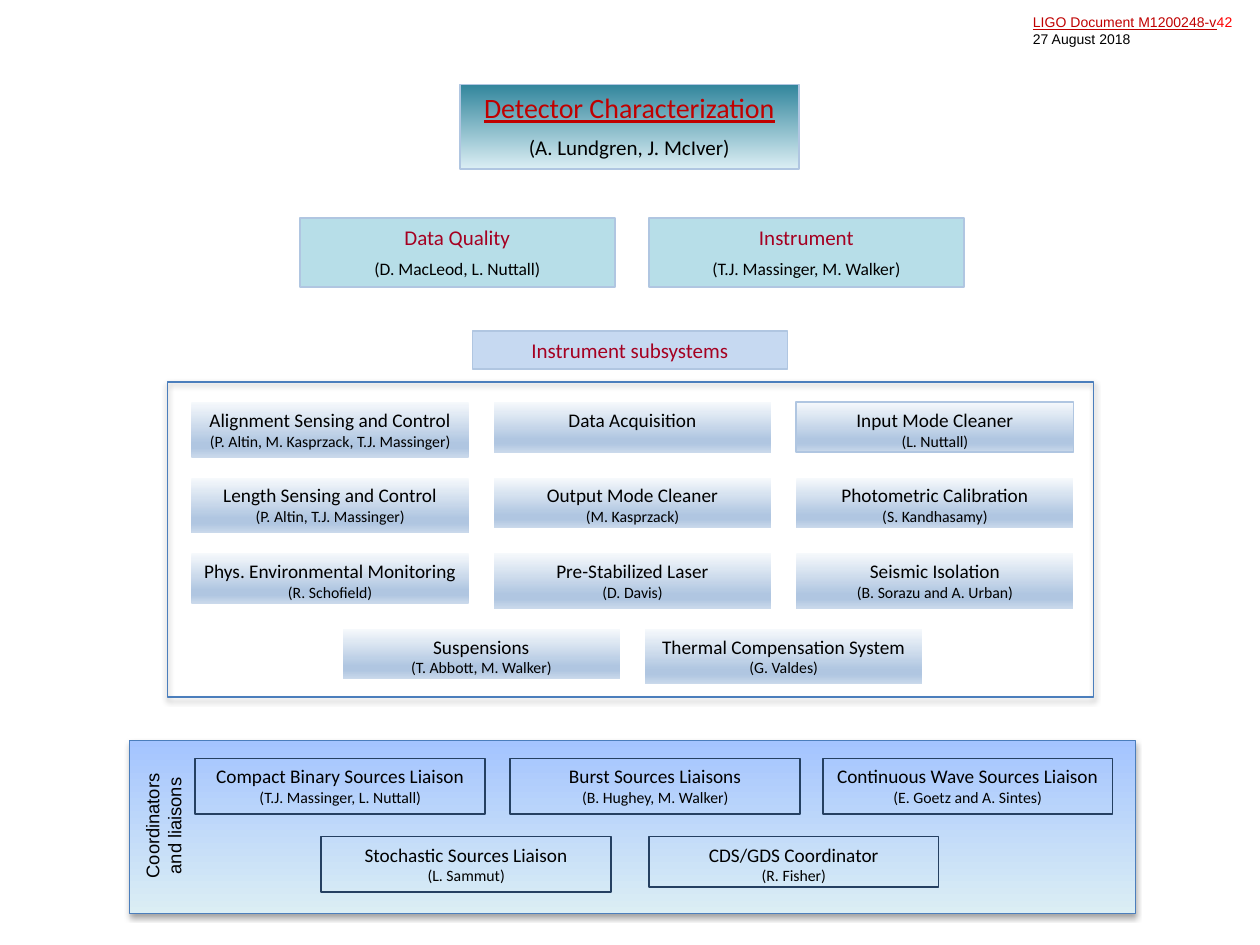
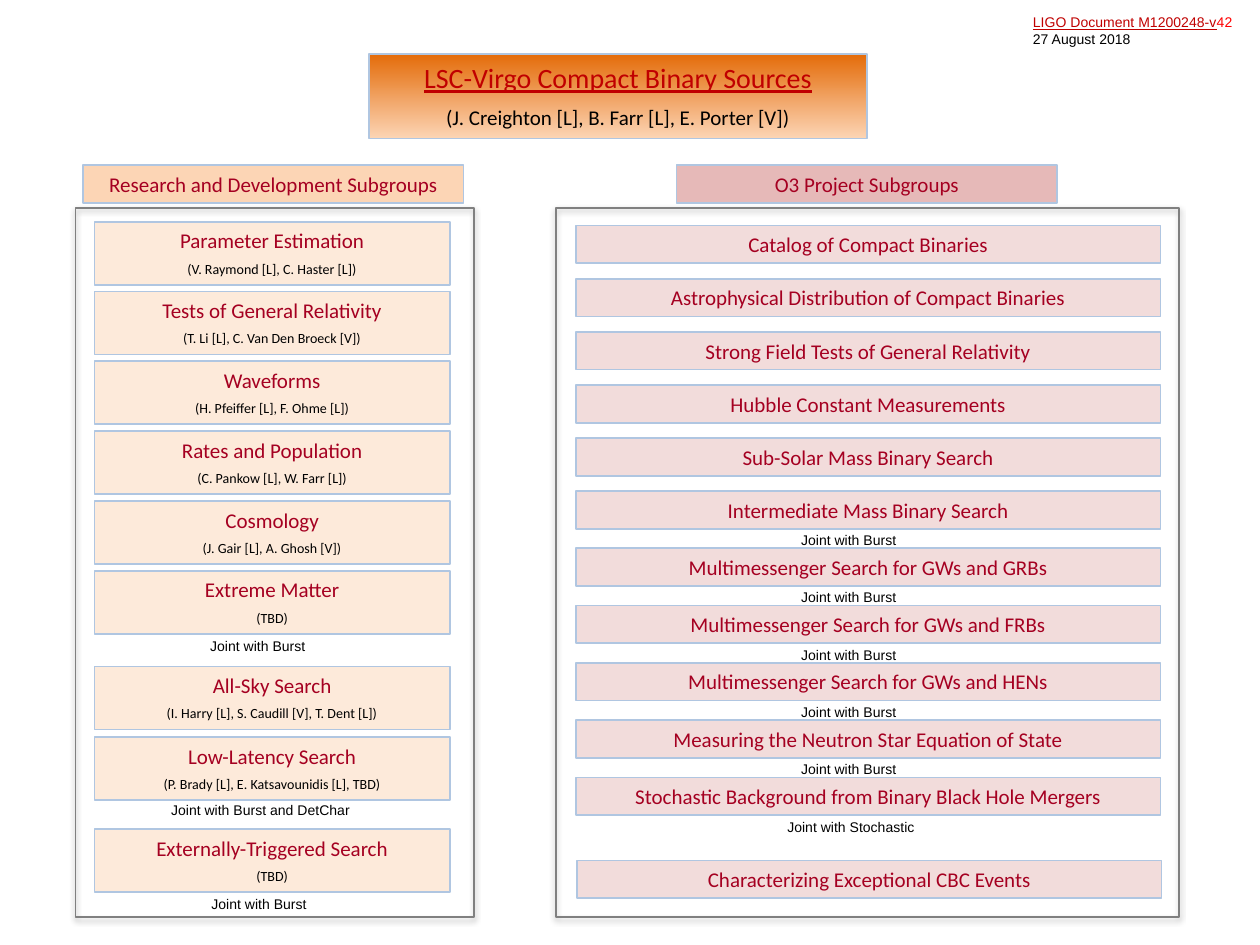
from dataclasses import dataclass
from typing import Optional

from lxml import etree
from pptx import Presentation
from pptx.dml.color import RGBColor
from pptx.enum import shapes, text
from pptx.oxml.ns import qn
from pptx.util import Inches, Pt

BLACK = RGBColor(0x00, 0x00, 0x00)
CRIMSON = RGBColor(0xC0, 0x00, 0x00)
RED = RGBColor(0xFF, 0x00, 0x00)
WINE = RGBColor(0xA5, 0x00, 0x21)
STEEL = RGBColor(0xB0, 0xC6, 0xE1)
BLUE = RGBColor(0x4B, 0x7E, 0xBC)
NAVY = RGBColor(0x25, 0x40, 0x61)
GRAY = RGBColor(0x80, 0x80, 0x80)
TEAL = RGBColor(0x31, 0x85, 0x9C)
FOAM = RGBColor(0xDB, 0xEE, 0xF4)
AQUA = RGBColor(0xB7, 0xDE, 0xE8)
SKY = RGBColor(0xC6, 0xD9, 0xF1)
MIST = RGBColor(0xF6, 0xF9, 0xFC)
HAZE = RGBColor(0xCA, 0xD9, 0xEB)
AZURE = RGBColor(0xA4, 0xC4, 0xFF)
ORANGE = RGBColor(0xE4, 0x6C, 0x0A)
PEACH = RGBColor(0xFC, 0xD5, 0xB5)
CREAM = RGBColor(0xFD, 0xEA, 0xDA)
ROSE = RGBColor(0xE6, 0xB9, 0xB8)
BLUSH = RGBColor(0xF2, 0xDC, 0xDB)

Stops = tuple[tuple[int, RGBColor], ...]


@dataclass(frozen=True)
class Style:
    fill: Optional[RGBColor] = None
    stops: Stops = ()
    line: Optional[RGBColor] = None
    weight: float = 1
    shadow: bool = False
    sizes: tuple[float, float] = (12, 10)
    color: RGBColor = WINE
    spaced: bool = True
    under: bool = False


@dataclass(frozen=True)
class Area:
    left: float
    top: float
    width: float
    height: float

    def emu(self) -> tuple[int, int, int, int]:
        return tuple(Inches(v) for v in (self.left, self.top, self.width, self.height))


def banner(top: RGBColor, base: RGBColor) -> Style:
    return Style(stops=((0, top), (100, base)), line=STEEL, sizes=(16, 12),
                 color=CRIMSON, under=True)


SHEEN = ((0, MIST), (74, STEEL), (83, STEEL), (100, HAZE))
SYSTEM = Style(stops=SHEEN, sizes=(11, 9), color=BLACK, spaced=False)
EDGED = Style(stops=SHEEN, line=STEEL, sizes=(11, 9), color=BLACK, spaced=False)
LIAISON = Style(line=NAVY, sizes=(11, 9), color=BLACK, spaced=False)
GROUP = Style(fill=AQUA, line=STEEL)
RESEARCH = Style(fill=CREAM, line=STEEL, sizes=(12, 8))
PROJECT = Style(fill=BLUSH, line=STEEL)
FRAME = Style(line=GRAY, shadow=True)

SYSTEMS = (
    (1.52, 3.19, 0.44, "Alignment Sensing and Control\n(P. Altin, M. Kasprzack, T.J. Massinger)"),
    (3.92, 3.19, 0.4, "Data Acquisition"),
    (6.32, 3.19, 0.4, "Input Mode Cleaner\n(L. Nuttall)"),
    (1.52, 3.79, 0.44, "Length Sensing and Control\n(P. Altin, T.J. Massinger)"),
    (3.92, 3.79, 0.4, "Output Mode Cleaner\n(M. Kasprzack)"),
    (6.32, 3.79, 0.4, "Photometric Calibration\n(S. Kandhasamy)"),
    (1.52, 4.39, 0.4, "Phys. Environmental Monitoring\n(R. Schofield)"),
    (3.92, 4.39, 0.44, "Pre-Stabilized Laser\n(D. Davis)"),
    (6.32, 4.39, 0.44, "Seismic Isolation\n(B. Sorazu and A. Urban)"),
    (2.72, 4.99, 0.4, "Suspensions\n(T. Abbott, M. Walker)"),
    (5.12, 4.99, 0.44, "Thermal Compensation System\n(G. Valdes)"),
)
LIAISONS = (
    (1.55, 6.02, 0.44, "Compact Binary Sources Liaison\n(T.J. Massinger, L. Nuttall)"),
    (4.05, 6.02, 0.44, "Burst Sources Liaisons\n(B. Hughey, M. Walker)"),
    (6.53, 6.02, 0.44, "Continuous Wave Sources Liaison\n(E. Goetz and A. Sintes)"),
    (2.55, 6.64, 0.44, "Stochastic Sources Liaison\n(L. Sammut)"),
    (5.15, 6.64, 0.4, "CDS/GDS Coordinator\n(R. Fisher)"),
)
STUDIES = (
    "Parameter Estimation\n(V. Raymond [L], C. Haster [L])",
    "Tests of General Relativity\n(T. Li [L], C. Van Den Broeck [V])",
    "Waveforms\n(H. Pfeiffer [L], F. Ohme [L])",
    "Rates and Population\n(C. Pankow [L], W. Farr [L])",
    "Cosmology\n(J. Gair [L], A. Ghosh [V])",
    "Extreme Matter\n(TBD)",
)
SEARCHES = (
    (5.29, "All-Sky Search\n(I. Harry [L], S. Caudill [V], T. Dent [L])"),
    (5.85, "Low-Latency Search\n(P. Brady [L], E. Katsavounidis [L], TBD)"),
    (6.58, "Externally-Triggered Search\n(TBD)"),
)
PROJECTS = (
    "Catalog of Compact Binaries",
    "Astrophysical Distribution of Compact Binaries",
    "Strong Field Tests of General Relativity",
    "Hubble Constant Measurements",
    "Sub-Solar Mass Binary Search",
    "Intermediate Mass Binary Search",
)
JOINT = (
    "Multimessenger Search for GWs and GRBs",
    "Multimessenger Search for GWs and FRBs",
    "Multimessenger Search for GWs and HENs",
    "Measuring the Neutron Star Equation of State",
    "Stochastic Background from Binary Black Hole Mergers",
)
BURST = "Joint with Burst"
NOTES = (
    (1.57, 5.01, 1, BURST),
    (1.26, 6.31, 1.64, "Joint with Burst and DetChar"),
    (1.58, 7.06, 1, BURST),
    (6.15, 6.45, 1.22, "Joint with Stochastic"),
)


def blend(shape, stops: Stops) -> None:
    shape.fill.gradient()
    shape.fill.gradient_angle = 270
    items = shape._element.spPr.find(qn("a:gradFill")).find(qn("a:gsLst"))
    for item in list(items):
        items.remove(item)
    for pos, color in stops:
        stop = etree.SubElement(items, qn("a:gs"), pos=str(pos * 1000))
        etree.SubElement(stop, qn("a:srgbClr"), val=str(color))


def shade(shape) -> None:
    shape.shadow.inherit = False
    effects = shape._element.spPr.find(qn("a:effectLst"))
    outer = etree.SubElement(effects, qn("a:outerShdw"), blurRad="40000", dist="23000",
                             dir="5400000", rotWithShape="0")
    color = etree.SubElement(outer, qn("a:srgbClr"), val=str(BLACK))
    etree.SubElement(color, qn("a:alpha"), val="35000")


def ink(run, size: float, color: RGBColor, face: str, under: bool = False) -> None:
    font = run.font
    font.name, font.size, font.underline = face, Pt(size), under
    font.color.rgb = color


def dress(shape, style: Style, words: str) -> None:
    if style.stops:
        blend(shape, style.stops)
    elif style.fill is not None:
        shape.fill.solid()
        shape.fill.fore_color.rgb = style.fill
    else:
        shape.fill.background()
    if style.line is None:
        shape.line.fill.background()
    else:
        shape.line.color.rgb = style.line
        shape.line.width = Pt(style.weight)
    if style.shadow:
        shade(shape)
    if not words:
        return
    frame = shape.text_frame
    frame.text = words
    frame.word_wrap = True
    frame.auto_size = text.MSO_AUTO_SIZE.NONE
    frame.vertical_anchor = text.MSO_ANCHOR.TOP
    for row, (para, size) in enumerate(zip(frame.paragraphs, style.sizes)):
        para.alignment = text.PP_ALIGN.CENTER
        para.space_before = Pt(size / 2 if row and style.spaced else 0)
        for run in para.runs:
            ink(run, size, BLACK if row else style.color, "Calibri", style.under and not row)


def box(slide, area: Area, style: Style, words: str = "") -> None:
    shape = slide.shapes.add_shape(shapes.MSO_SHAPE.RECTANGLE, *area.emu())
    shape.shadow.inherit = False
    dress(shape, style, words)


def label(slide, area: Area, words: str, size: float = 8, wrap: bool = False):
    shape = slide.shapes.add_textbox(*area.emu())
    frame = shape.text_frame
    frame.text = words
    frame.word_wrap = wrap
    for para in frame.paragraphs:
        for run in para.runs:
            ink(run, size, BLACK, "Arial")
    return shape


def start(deck, area: Area, style: Style, words: str):
    slide = deck.slides.add_slide(deck.slide_layouts[5])
    title = slide.shapes.title
    title.left, title.top, title.width, title.height = area.emu()
    dress(title, style, words)
    stamp = label(slide, Area(8.1, 0.06, 1.84, 0.37),
                  "LIGO Document M1200248-v\n27 August 2018", wrap=True)
    para = stamp.text_frame.paragraphs[0]
    ink(para.runs[0], 8, CRIMSON, "Arial", True)
    issue = para.add_run()
    issue.text = "42"
    ink(issue, 8, RED, "Arial")
    return slide


def detector(deck) -> None:
    slide = start(deck, Area(3.65, 0.67, 2.69, 0.67), banner(TEAL, FOAM),
                  "Detector Characterization\n(A. Lundgren, J. McIver)")
    box(slide, Area(2.38, 1.73, 2.5, 0.55), GROUP, "Data Quality\n(D. MacLeod, L. Nuttall)")
    box(slide, Area(5.15, 1.73, 2.5, 0.55), GROUP, "Instrument\n(T.J. Massinger, M. Walker)")
    box(slide, Area(3.75, 2.63, 2.5, 0.3), Style(fill=SKY, line=STEEL), "Instrument subsystems")
    box(slide, Area(1.33, 3.03, 7.35, 2.5), Style(line=BLUE, shadow=True))
    for left, top, height, words in SYSTEMS:
        style = EDGED if words.startswith("Input") else SYSTEM
        box(slide, Area(left, top, 2.2, height), style, words)
    box(slide, Area(1.03, 5.88, 7.98, 1.37),
        Style(stops=((0, AZURE), (100, FOAM)), line=BLUE, weight=0.75, shadow=True))
    for left, top, height, words in LIAISONS:
        box(slide, Area(left, top, 2.3, height), LIAISON, words)
    side = label(slide, Area(0.61, 6.33, 1.37, 0.45), "Coordinators\nand liaisons", 10.5, True)
    side.rotation = 270
    for para in side.text_frame.paragraphs:
        para.alignment = text.PP_ALIGN.CENTER


def binary(deck) -> None:
    slide = start(deck, Area(2.93, 0.43, 3.95, 0.67), banner(ORANGE, PEACH),
                  "LSC-Virgo Compact Binary Sources\n(J. Creighton [L], B. Farr [L], E. Porter [V])")
    box(slide, Area(0.66, 1.31, 3.02, 0.3), Style(fill=PEACH, line=STEEL),
        "Research and Development Subgroups")
    box(slide, Area(5.37, 1.31, 3.02, 0.3), Style(fill=ROSE, line=STEEL), "O3 Project Subgroups")
    box(slide, Area(0.6, 1.65, 3.16, 5.63), FRAME)
    box(slide, Area(4.41, 1.65, 4.95, 5.63), FRAME)

    pitch = (4.53 - 1.76) / (len(STUDIES) - 1)
    studies = tuple((1.76 + row * pitch, words) for row, words in enumerate(STUDIES))
    for top, words in studies + SEARCHES:
        box(slide, Area(0.75, top, 2.82, 0.5), RESEARCH, words)

    pitch = (3.9 - 1.79) / (len(PROJECTS) - 1)
    for row, words in enumerate(PROJECTS):
        box(slide, Area(4.57, 1.79 + row * pitch, 4.64, 0.3), PROJECT, words)
    pitch = (6.17 - 4.35) / (len(JOINT) - 1)
    for row, words in enumerate(JOINT):
        top = 4.35 + row * pitch
        box(slide, Area(4.57, top, 4.64, 0.3), PROJECT, words)
        label(slide, Area(6.26, top - 0.18, 1, 0.24), BURST)
    box(slide, Area(4.58, 6.83, 4.64, 0.3), PROJECT, "Characterizing Exceptional CBC Events")
    for left, top, width, words in NOTES:
        label(slide, Area(left, top, width, 0.24), words)


def main() -> None:
    deck = Presentation()
    deck.slide_width, deck.slide_height = Inches(10), Inches(7.5)
    detector(deck)
    binary(deck)
    deck.save("out.pptx")


if __name__ == "__main__":
    main()
